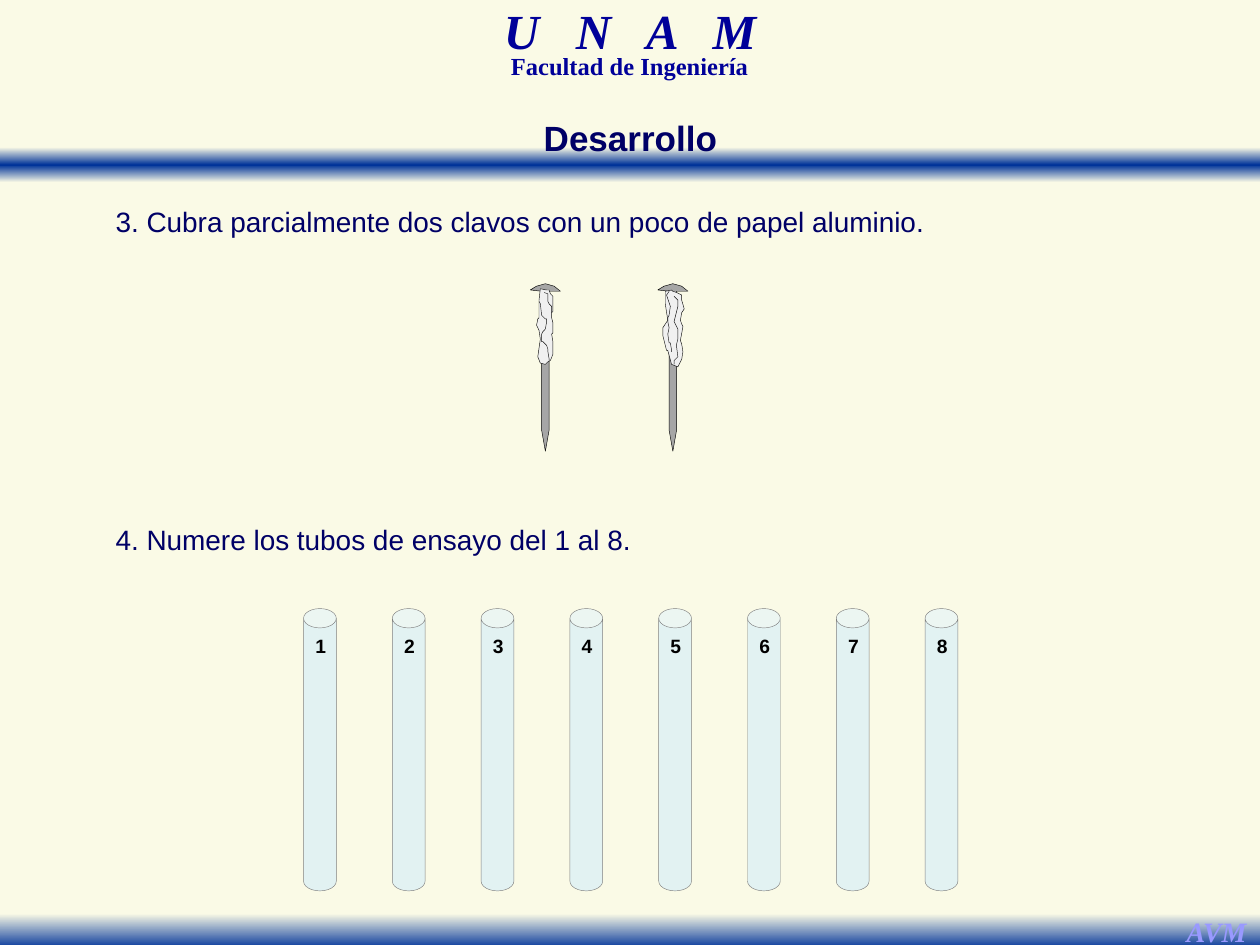
from lxml.etree import SubElement
from pptx import Presentation
from pptx.dml.color import RGBColor
from pptx.enum.shapes import MSO_SHAPE
from pptx.enum.text import MSO_ANCHOR, PP_ALIGN
from pptx.oxml.ns import qn
from pptx.util import Cm, Pt

COLORS = {
    "cream": "FAFAE6", "band": "003399", "header": "000099", "text": "000066",
    "signature": "9999FF", "steel": "A6A6A6", "foil": "F0F0F0", "crease": "0D0D0D",
    "glass": "CCECFF", "glass_edge": "808080", "black": "000000",
}
SERIF = {"font_name": "Times New Roman", "bold": True}
BANDS = [
    (2.97, [(0, "cream"), (50, "band"), (100, "cream")]),
    (18.42, [(0, "cream"), (100, "band")]),
]
HEADERS = [
    ("U   N   A   M", (7.72, 0.2, 9.96, 1.09),
     {**SERIF, "size": 28, "color": "header", "italic": True, "spacing": 0.7}),
    ("Facultad de Ingeniería", (8.15, 1.07, 9.09, 0.66),
     {**SERIF, "size": 14, "color": "header", "spacing": 0.7}),
    ("AVM", (23.65, 18.31, 1.75, 0.94),
     {**SERIF, "size": 16, "color": "signature", "italic": True, "wrap": False}),
]
TITLE = "Desarrollo"
STEPS = [
    ("3. Cubra parcialmente dos clavos con un poco de papel aluminio.", 3.73),
    ("4. Numere los tubos de ensayo del 1 al 8.", 10.13),
]
TUBE_LABELS = [str(number) for number in range(1, 9)]
TUBE_LEFT, TUBE_TOP, TUBE_WIDTH, TUBE_HEIGHT, TUBE_PITCH = 6.12, 12.27, 0.66, 5.69, 1.79

NAIL_UNIT = Cm(2.54) / 100
NAIL_TOP = 5.72
NAIL_OUTLINE = [(9, 6), (0, 5), (5, 2), (12, 0), (19, 2), (24, 6), (15, 6),
                (15, 116), (12, 133), (9, 116)]
NAILS = [
    {
        "left": 13.26,
        "foil": [(12, 6), (11, 5), (6, 6), (6, 16), (8, 29), (4, 35), (4, 41), (5, 45),
                 (7, 53), (8, 53), (11, 64), (16, 66), (19, 60), (20, 54), (19, 48),
                 (18, 45), (20, 34), (19, 32), (18, 29), (19, 23), (21, 20), (19, 13),
                 (19, 9), (15, 7)],
        "creases": [
            [(9, 6), (7, 9), (10, 18), (9, 25), (8, 27), (8, 30), (9, 35), (8, 40),
             (9, 47), (10, 47), (11, 53), (11, 54)],
            [(13, 10), (16, 13), (16, 18), (13, 30), (16, 36), (16, 44), (15, 48),
             (15, 50), (16, 58), (15, 59), (13, 61), (13, 64)],
        ],
    },
    {
        "left": 10.69,
        "foil": [(16, 61), (14, 62), (12, 64), (8, 63), (6, 58), (8, 44), (7, 37), (6, 35),
                 (5, 33), (6, 28), (7, 27), (7, 13), (8, 4), (13, 5), (15, 5), (16, 8),
                 (18, 10), (18, 22), (17, 23), (17, 27), (18, 31), (18, 39), (17, 40),
                 (18, 46), (18, 56)],
        "creases": [
            [(11, 7), (14, 8), (14, 14), (15, 16), (17, 18), (17, 23)],
            [(7, 14), (8, 16), (9, 25), (12, 28), (13, 28), (13, 30), (12, 36), (11, 37),
             (10, 38), (9, 40), (9, 46), (10, 46), (12, 48), (13, 49), (14, 52),
             (14, 54), (15, 60), (15, 61)],
        ],
    },
]


def rgb(name):
    return RGBColor.from_string(COLORS[name])


def write(shape, text, size, color, font_name="Arial", bold=False, italic=False,
          align=PP_ALIGN.CENTER, spacing=1.0, wrap=True):
    frame = shape.text_frame
    frame.text = text
    frame.word_wrap = wrap
    frame.vertical_anchor = MSO_ANCHOR.TOP
    paragraph = frame.paragraphs[0]
    paragraph.alignment = align
    paragraph.line_spacing = spacing
    font = paragraph.runs[0].font
    font.name, font.size, font.bold, font.italic = font_name, Pt(size), bold, italic
    font.color.rgb = rgb(color)
    return paragraph


def add_text(slide, text, box, **style):
    return write(slide.shapes.add_textbox(*map(Cm, box)), text, **style)


def add_band(slide, top, stops):
    band = slide.shapes.add_shape(MSO_SHAPE.RECTANGLE, 0, Cm(top), Cm(25.4), Cm(0.71))
    band.shadow.inherit = False
    band.line.fill.background()
    band.fill.gradient()
    band.fill.gradient_angle = 270
    stop_list = band._element.spPr.find(".//" + qn("a:gsLst"))
    for stop in list(stop_list):
        stop_list.remove(stop)
    for position, color in stops:
        stop = SubElement(stop_list, qn("a:gs"), pos=str(position * 1000))
        SubElement(stop, qn("a:srgbClr"), val=COLORS[color])


def paint(shape, fill, line):
    shape.shadow.inherit = False
    if fill:
        shape.fill.solid()
        shape.fill.fore_color.rgb = rgb(fill)
    else:
        shape.fill.background()
    shape.line.color.rgb = rgb(line)
    shape.line.width = Pt(0.25)


def add_nail(slide, left, foil, creases):
    group = slide.shapes.add_group_shape()
    parts = [(NAIL_OUTLINE, "steel", "black"), (foil, "foil", "crease")]
    parts += [(crease, None, "crease") for crease in creases]
    for points, fill, line in parts:
        builder = group.shapes.build_freeform(*points[0], scale=NAIL_UNIT)
        builder.add_line_segments(points[1:], close=fill is not None)
        paint(builder.convert_to_shape(Cm(left), Cm(NAIL_TOP)), fill, line)


def add_tubes(slide):
    group = slide.shapes.add_group_shape()
    for index, label in enumerate(TUBE_LABELS):
        tube = group.shapes.add_shape(
            MSO_SHAPE.CAN, Cm(TUBE_LEFT + index * TUBE_PITCH), Cm(TUBE_TOP),
            Cm(TUBE_WIDTH), Cm(TUBE_HEIGHT))
        tube.adjustments[0] = 0.59
        paint(tube, "glass", "glass_edge")
        glass = tube._element.spPr.find(qn("a:solidFill")).find(qn("a:srgbClr"))
        SubElement(glass, qn("a:alpha"), val="51000")
        write(tube, label, 11, "black", bold=True, wrap=False)
        tube.text_frame.margin_left = Cm(0.03)
        tube.text_frame.margin_right = 0


def main():
    presentation = Presentation()
    presentation.slide_width, presentation.slide_height = Cm(25.4), Cm(19.05)
    slide = presentation.slides.add_slide(presentation.slide_layouts[5])
    slide.background.fill.solid()
    slide.background.fill.fore_color.rgb = rgb("cream")

    for top, stops in BANDS:
        add_band(slide, top, stops)
    for text, box, style in HEADERS:
        add_text(slide, text, box, **style)

    title = slide.shapes.title
    title.left, title.top, title.width, title.height = map(Cm, (10.69, 1.88, 4.04, 1.32))
    write(title, TITLE, 20, "text", bold=True, spacing=1.4, wrap=False)
    slide.shapes._spTree.append(title._element)

    for text, top in STEPS:
        paragraph = add_text(slide, text, (2.08, top, 21.21, 1.09), size=16, color="text",
                             align=PP_ALIGN.JUSTIFY, spacing=1.4)
        properties = paragraph._p.get_or_add_pPr()
        properties.set("marL", str(Cm(0.74)))
        properties.set("indent", str(-Cm(0.74)))
    for nail in NAILS:
        add_nail(slide, **nail)
    add_tubes(slide)
    presentation.save("out.pptx")


if __name__ == "__main__":
    main()
